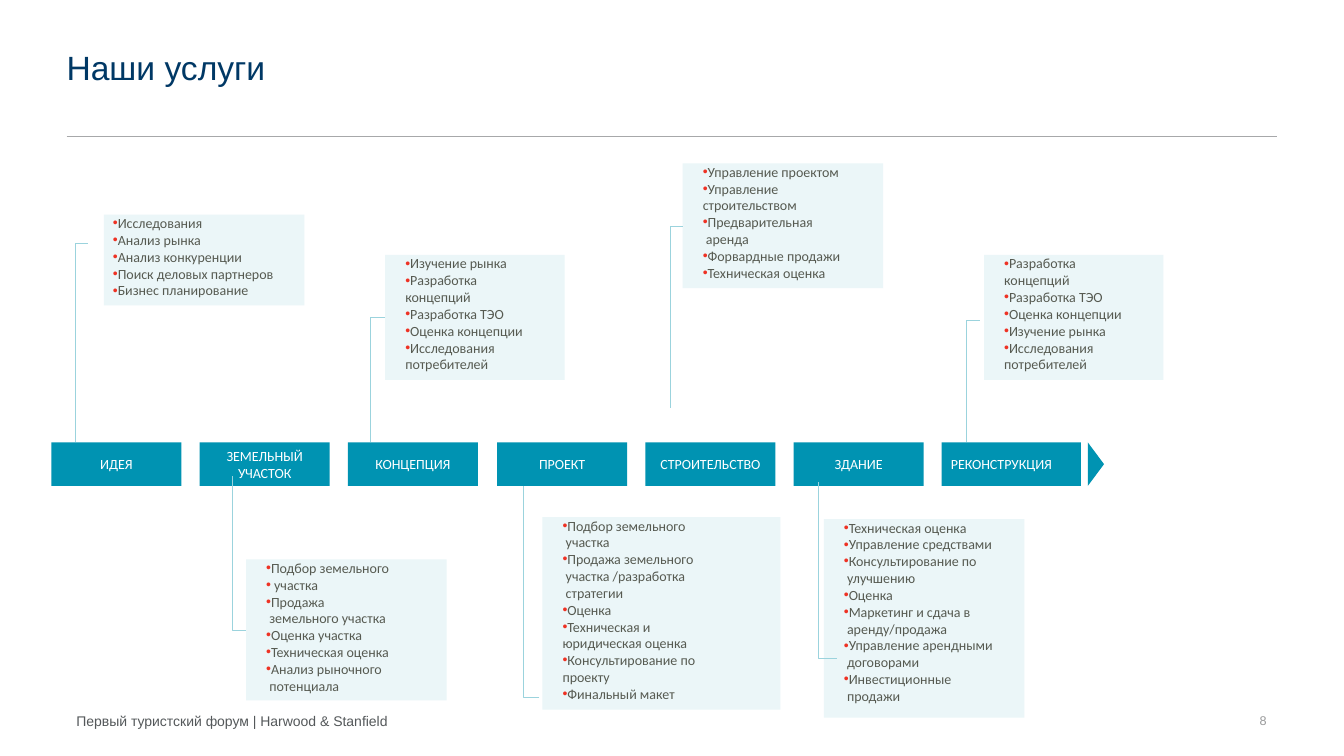
from lxml import etree
from pptx import Presentation
from pptx.dml.color import RGBColor
from pptx.enum.shapes import MSO_CONNECTOR, MSO_SHAPE
from pptx.enum.text import MSO_ANCHOR, PP_ALIGN
from pptx.oxml.ns import qn
from pptx.util import Pt

PX = 9144
RECT, ARROW = MSO_SHAPE.RECTANGLE, MSO_SHAPE.PENTAGON
STRAIGHT, ELBOW = MSO_CONNECTOR.STRAIGHT, MSO_CONNECTOR.ELBOW
TOP, MIDDLE, BOTTOM = MSO_ANCHOR.TOP, MSO_ANCHOR.MIDDLE, MSO_ANCHOR.BOTTOM
LEFT, CENTER, RIGHT = PP_ALIGN.LEFT, PP_ALIGN.CENTER, PP_ALIGN.RIGHT

COLORS = {
    "title": "003865", "rule": "A7A8AA", "footer": "54585A", "number": "999A9B",
    "stage": "0093B2", "label": "FFFFFF", "link": "9BD3DD",
    "card": "EBF6F8", "body": "565A51", "bullet": "EE3224",
}

STAGES = ["ИДЕЯ", "ЗЕМЕЛЬНЫЙ\nУЧАСТОК", "КОНЦЕПЦИЯ", "ПРОЕКТ",
          "СТРОИТЕЛЬСТВО", "ЗДАНИЕ", "РЕКОНСТРУКЦИЯ"]
STAGE_X, STAGE_Y, STAGE_PITCH, STAGE_W, STAGE_H = 51, 439, 147.2, 129, 43

CARDS = [
    ((103, 213, 199, 90), (0, 0), (87, 241, 75, 439),
     ["Исследования", "Анализ рынка", "Анализ конкуренции",
      "Поиск деловых партнеров", "Бизнес планирование"]),
    ((244, 555, 199, 140), (11, 6), (244, 625, 230, 472),
     ["Подбор земельного", " участка", "Продажа\v земельного участка",
      "Оценка участка", "Техническая оценка", "Анализ рыночного\v потенциала"]),
    ((382, 253, 178, 124), (11, 6), (382, 315, 367, 439),
     ["Изучение рынка", "Разработка\vконцепций", "Разработка ТЭО",
      "Оценка концепции", "Исследования\vпотребителей"]),
    ((538, 513, 236, 191), (11, 6), (535, 692, 519, 482),
     ["Подбор земельного\v участка",
      "Продажа земельного\v участка /разработка\v стратегии", "Оценка",
      "Техническая и\vюридическая оценка", "Консультирование по\vпроекту",
      "Финальный макет"]),
    ((677, 162, 199, 124), (11, 6), (677, 224, 665, 405),
     ["Управление проектом", "Управление\vстроительством",
      "Предварительная\v аренда", "Форвардные продажи", "Техническая оценка"]),
    ((817, 515, 199, 197), (11, 6), (830, 653, 812, 478),
     ["Техническая оценка", "Управление средствами",
      "Консультирование по\v улучшению", "Оценка",
      "Маркетинг и сдача в\v аренду/продажа",
      "Управление арендными\v договорами", "Инвестиционные\v продажи"]),
    ((976, 253, 178, 124), (11, 6), (972, 318, 958, 439),
     ["Разработка\vконцепций", "Разработка ТЭО", "Оценка концепции",
      "Изучение рынка", "Исследования\vпотребителей"]),
]


class ServicesSlide:
    """Draws styled elements on one slide, with lengths in px of 1/100 inch."""

    def __init__(self, prs):
        self.slide = prs.slides.add_slide(prs.slide_layouts[6])
        self.shapes = self.slide.shapes

    def color(self, name):
        return RGBColor.from_string(COLORS[name])

    def set_text(self, sp, text, size, font, color, align=LEFT, anchor=TOP, insets=(0, 0, 0, 0)):
        tf = sp.text_frame
        tf.text = text
        tf.word_wrap = True
        tf.vertical_anchor = anchor
        tf.margin_left, tf.margin_top, tf.margin_right, tf.margin_bottom = (
            n * PX for n in insets)
        for p in tf.paragraphs:
            p.alignment = align
            for r in p.runs:
                r.font.size = Pt(size)
                r.font.name = font
                r.font.color.rgb = self.color(color)
        return tf

    def text(self, box, text, size, color, **layout):
        sp = self.shapes.add_textbox(*(n * PX for n in box))
        self.set_text(sp, text, size, "Arial", color, **layout)

    def block(self, kind, box, fill):
        sp = self.shapes.add_shape(kind, *(n * PX for n in box))
        sp.shadow.inherit = False
        sp.fill.solid()
        sp.fill.fore_color.rgb = self.color(fill)
        sp.line.fill.background()
        return sp

    def stage(self, box, label, align=CENTER, indent=0):
        sp = self.block(RECT, box, "stage")
        self.set_text(sp, label, 10, "Calibri", "label", align, MIDDLE, (indent, 0, 0, 0))

    def card(self, box, padding, items):
        side, bottom = padding
        sp = self.block(RECT, box, "card")
        tf = self.set_text(sp, "\n".join(items), 10, "Calibri", "body",
                           insets=(side, 0, side, bottom))
        for p in tf.paragraphs:
            self.bullet(p)

    def bullet(self, p):
        pPr = p._p.get_or_add_pPr()
        pPr.set("marL", str(9 * PX))
        pPr.set("indent", "0")
        clr = etree.SubElement(pPr, qn("a:buClr"))
        etree.SubElement(clr, qn("a:srgbClr"), val=COLORS["bullet"])
        etree.SubElement(pPr, qn("a:buFont"), typeface="Arial")
        etree.SubElement(pPr, qn("a:buChar"), char="•")

    def line(self, ends, color, width, kind=STRAIGHT):
        cxn = self.shapes.add_connector(kind, *(n * PX for n in ends))
        cxn.line.color.rgb = self.color(color)
        cxn.line.width = Pt(width)
        spPr = cxn._element.spPr
        etree.SubElement(spPr, qn("a:effectLst"))
        if kind == ELBOW:
            spPr.find(qn("a:prstGeom")).set("prst", "bentConnector2")


def main():
    prs = Presentation()
    prs.slide_width, prs.slide_height = 1333 * PX, 750 * PX
    s = ServicesSlide(prs)

    s.line((66, 135, 1267, 135), "rule", 0.5)
    s.text((66, 46, 901, 41), "Наши услуги", 24, "title", anchor=BOTTOM)
    s.text((66, 702, 543, 27), "Первый туристский форум | Harwood & Stanfield",
           10, "footer", insets=(10, 5, 10, 5))
    s.text((1178, 695, 88, 40), "8", 9, "number",
           align=RIGHT, anchor=MIDDLE, insets=(10, 5, 10, 5))

    *regular, last = [(round(STAGE_X + i * STAGE_PITCH), label)
                      for i, label in enumerate(STAGES)]
    for x, label in regular:
        s.stage((x, STAGE_Y, STAGE_W, STAGE_H), label)
    s.stage((last[0], STAGE_Y, 138, STAGE_H), last[1], LEFT, 9)
    tip = s.block(ARROW, (1079, STAGE_Y, 16, STAGE_H), "stage")
    tip.adjustments[0] = 1

    for box, padding, link, items in CARDS:
        s.card(box, padding, items)
        s.line(link, "link", 0.25, ELBOW)

    prs.save("out.pptx")


if __name__ == "__main__":
    main()
